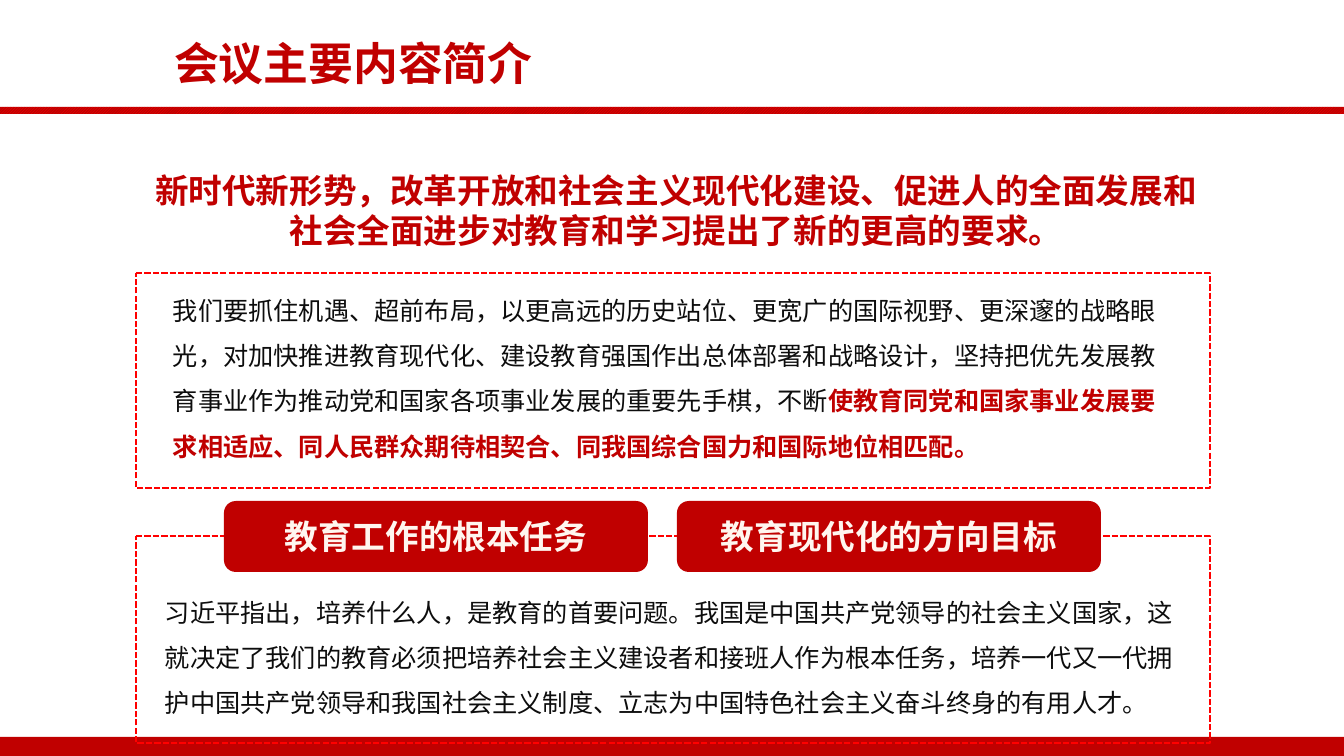
from lxml.etree import SubElement
from pptx import Presentation
from pptx.dml.color import RGBColor
from pptx.enum.dml import MSO_LINE, MSO_PATTERN
from pptx.enum.shapes import MSO_SHAPE as SHAPE
from pptx.enum.text import MSO_ANCHOR as ANCHOR, MSO_AUTO_SIZE as AUTO, PP_ALIGN as ALIGN
from pptx.oxml.ns import qn
from pptx.util import Emu, Pt

COLORS = {"red": "C00000", "bright": "FF0000", "ink": "0D0D0D", "cream": "FFF6EF"}
CJK = "Noto Sans CJK SC"


def px(n):
    return Emu(round(n * 914400 / 100.8))


def color(name):
    return RGBColor.from_string(COLORS[name])


class Deck:
    def __init__(self, width, height):
        self.prs = Presentation()
        self.prs.slide_width, self.prs.slide_height = px(width), px(height)
        self.s = self.prs.slides.add_slide(self.prs.slide_layouts[5])

    def add_runs(self, sp, runs, size, font=CJK, align=ALIGN.LEFT, anchor=ANCHOR.TOP, spacing=None):
        tf = sp.text_frame
        tf.word_wrap, tf.auto_size, tf.vertical_anchor = True, AUTO.NONE, anchor
        p = tf.paragraphs[0]
        p.alignment = align
        if spacing:
            p.line_spacing = spacing
        for text, name, bold in runs:
            r = p.add_run()
            r.text = text
            r.font.size, r.font.bold, r.font.name = Pt(size), bold, font
            r.font.color.rgb = color(name)
            SubElement(r._r.get_or_add_rPr(), qn("a:ea"), typeface=CJK)

    def title(self, box, text):
        sp = self.s.shapes.title
        sp.left, sp.top, sp.width, sp.height = map(px, box)
        self.add_runs(sp, [(text, "red", True)], 32)

    def text(self, box, runs, size, **style):
        self.add_runs(self.s.shapes.add_textbox(*map(px, box)), runs, size, **style)

    def shape(self, kind, box):
        sp = self.s.shapes.add_shape(kind, *map(px, box))
        sp.shadow.inherit = False
        return sp

    def bar(self, box, pattern=None):
        sp = self.shape(SHAPE.RECTANGLE, box)
        sp.line.fill.background()
        if pattern:
            sp.fill.patterned()
            sp.fill.pattern = pattern
            sp.fill.fore_color.rgb = color("bright")
            sp.fill.back_color.rgb = color("red")
        else:
            sp.fill.solid()
            sp.fill.fore_color.rgb = color("red")

    def frame(self, box):
        sp = self.shape(SHAPE.ROUNDED_RECTANGLE, box)
        sp.adjustments[0] = 0
        sp.fill.background()
        sp.line.color.rgb = color("bright")
        sp.line.width = Pt(1.5)
        sp.line.dash_style = MSO_LINE.SQUARE_DOT

    def label(self, box, text):
        sp = self.shape(SHAPE.ROUNDED_RECTANGLE, box)
        sp.fill.solid()
        sp.fill.fore_color.rgb = color("red")
        sp.line.fill.background()
        self.add_runs(sp, [(text, "cream", True)], 24, "Arial", ALIGN.CENTER, ANCHOR.MIDDLE)


def main():
    deck = Deck(1344, 756)
    deck.bar((0, 737, 1344, 19))
    deck.bar((0, 107, 1344, 7), MSO_PATTERN.DARK_UPWARD_DIAGONAL)
    deck.title((164, 31, 682, 65), "会议主要内容简介")
    deck.text((143, 165, 1066, 92), [
        ("新时代新形势，改革开放和社会主义现代化建设、促进人的全面发展和"
         "社会全面进步对教育和学习提出了新的更高的要求。", "red", True),
    ], 24, align=ALIGN.CENTER)

    deck.frame((136, 273, 1074, 215))
    deck.text((163, 275, 1009, 194), [
        ("我们要抓住机遇、超前布局，以更高远的历史站位、更宽广的国际视野、更深邃的战略眼光，"
         "对加快推进教育现代化、建设教育强国作出总体部署和战略设计，"
         "坚持把优先发展教育事业作为推动党和国家各项事业发展的重要先手棋，不断", "ink", False),
        ("使教育同党和国家事业发展要求相适应、同人民群众期待相契合、"
         "同我国综合国力和国际地位相匹配。", "red", True),
    ], 18, spacing=1.5)

    deck.frame((136, 536, 1074, 207))
    deck.text((155, 577, 1049, 147), [
        ("习近平指出，培养什么人，是教育的首要问题。我国是中国共产党领导的社会主义国家，"
         "这就决定了我们的教育必须把培养社会主义建设者和接班人作为根本任务，"
         "培养一代又一代拥护中国共产党领导和我国社会主义制度、"
         "立志为中国特色社会主义奋斗终身的有用人才。", "ink", False),
    ], 18, font="Arial", spacing=1.5)

    for i, text in enumerate(("教育工作的根本任务", "教育现代化的方向目标")):
        deck.label((224 + 453 * i, 501, 424, 71), text)
    deck.prs.save("out.pptx")


if __name__ == "__main__":
    main()
